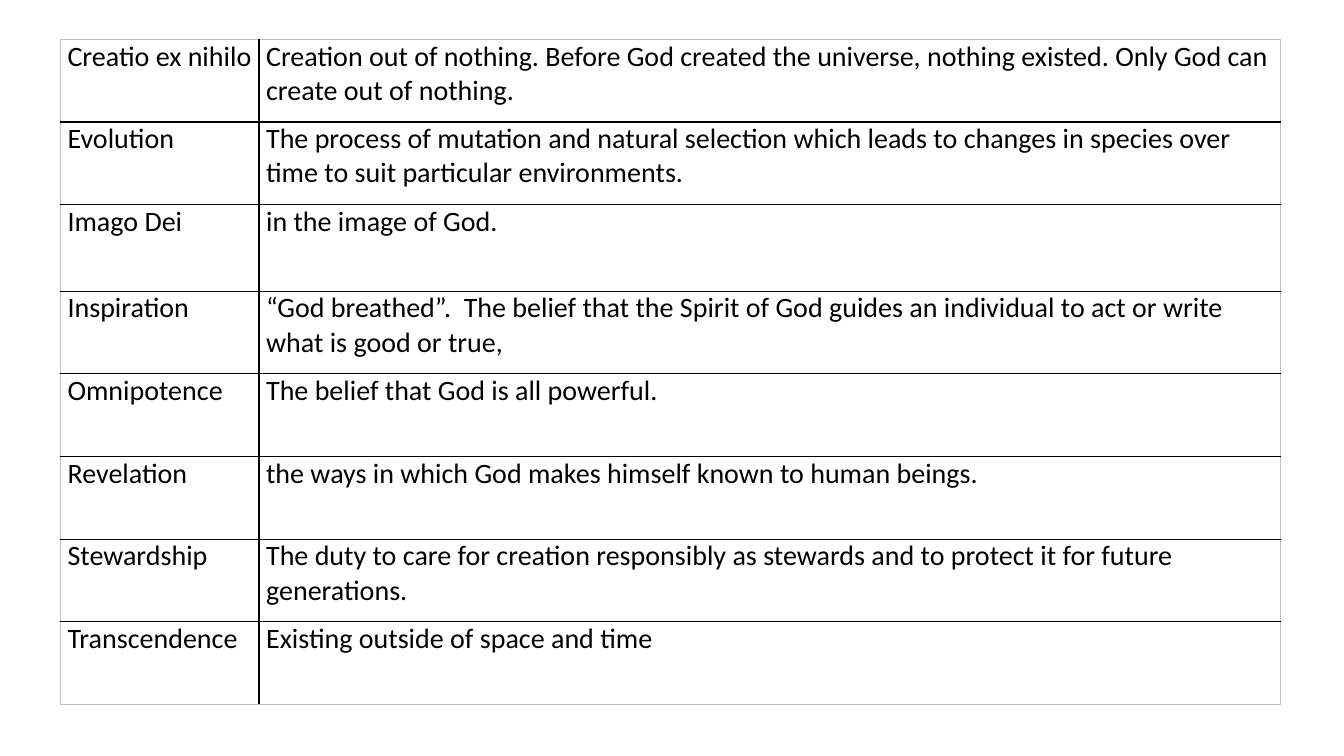
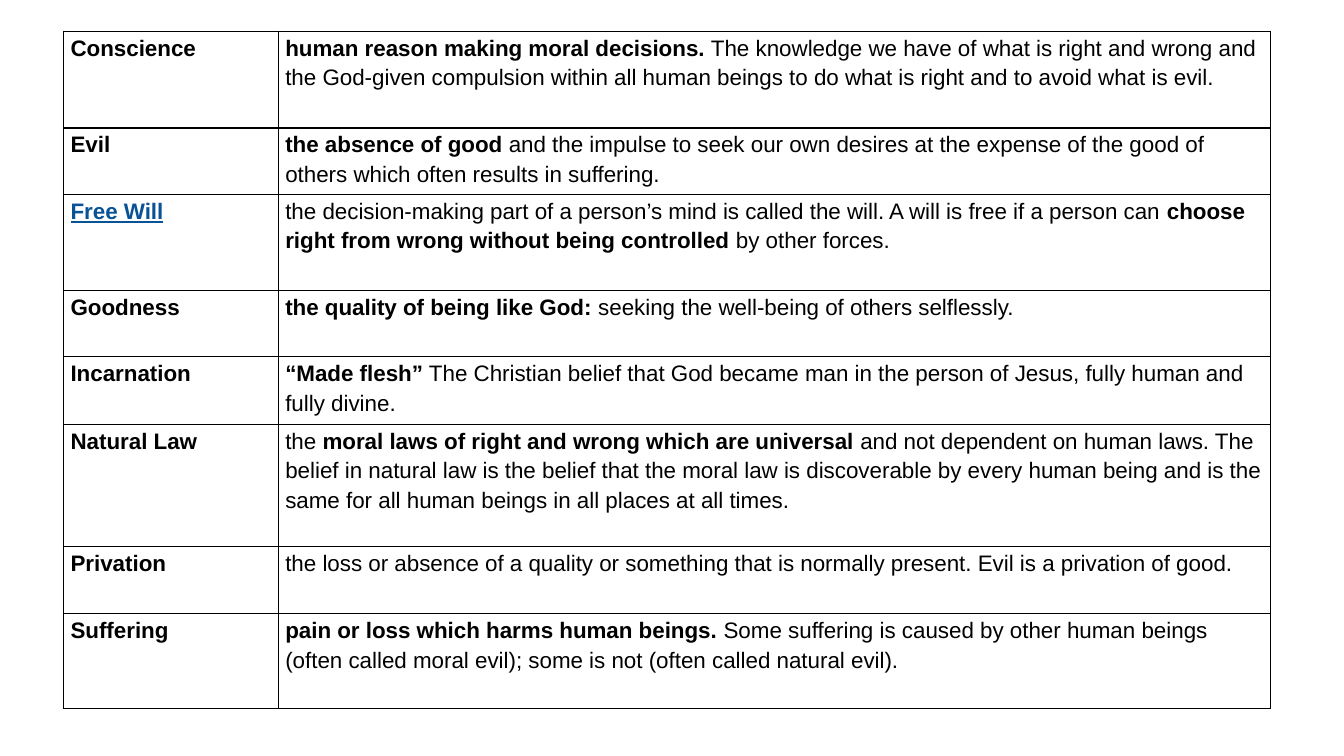
"""Build two glossary slides of religious terms."""
from lxml import etree
from pptx import Presentation
from pptx import util as u
from pptx.dml.color import RGBColor
from pptx.enum import text
from pptx.oxml import ns

PX = 9144
BLACK = RGBColor(0x00, 0x00, 0x00)
WHITE = RGBColor(0xFF, 0xFF, 0xFF)
GREY = RGBColor(0xBF, 0xBF, 0xBF)
LINK_BLUE = RGBColor(0x08, 0x52, 0x96)
BOLD_MARK = "**"
BLANK_LAYOUT = 6
CELL_FORMAT = {
    "margin_left": u.Emu(7 * PX),
    "margin_right": u.Emu(7 * PX),
    "margin_top": 0,
    "margin_bottom": 0,
    "vertical_anchor": text.MSO_ANCHOR.TOP,
}

CREATION = {
    "box": (60, 39),
    "columns": (197, 1013),
    "rows": (82, 82, 86, 82, 82, 82, 82, 82),
    "font": {"name": "Calibri", "size": u.Pt(20)},
    "paragraph": {},
    "edge": GREY,
    "links": (),
    "entries": (
        ("Creatio ex nihilo",
         "Creation out of nothing. Before God created the universe, nothing existed. "
         "Only God can create out of nothing."),
        ("Evolution",
         "The process of mutation and natural selection which leads to changes in species "
         "over time to suit particular environments."),
        ("Imago Dei", "in the image of God."),
        ("Inspiration",
         "“God breathed”.  The belief that the Spirit of God guides an individual to act "
         "or write what is good or true,"),
        ("Omnipotence", "The belief that God is all powerful."),
        ("Revelation", "the ways in which God makes himself known to human beings."),
        ("Stewardship",
         "The duty to care for creation responsibly as stewards and to protect it for "
         "future generations."),
        ("Transcendence", "Existing outside of space and time"),
    ),
}

GOOD_AND_EVIL = {
    "box": (63, 31),
    "columns": (213, 984),
    "rows": (96, 66, 95, 66, 67, 121, 67, 94),
    "font": {"name": "Arial", "size": u.Pt(16)},
    "paragraph": {"line_spacing": 1.19, "space_after": u.Pt(6)},
    "edge": BLACK,
    "links": ("Free Will",),
    "entries": (
        ("**Conscience**",
         "**human reason making moral decisions.** The knowledge we have of what is right "
         "and wrong and the God-given compulsion within all human beings to do what is "
         "right and to avoid what is evil."),
        ("**Evil**",
         "**the absence of good** and the impulse to seek our own desires at the expense "
         "of the good of others which often results in suffering."),
        ("**Free Will**",
         "the decision-making part of a person’s mind is called the will. A will is free "
         "if a person can **choose right from wrong without being controlled** by other "
         "forces."),
        ("**Goodness**",
         "**the quality of being like God:** seeking the well-being of others selflessly."),
        ("**Incarnation**",
         "**“Made flesh”** The Christian belief that God became man in the person of "
         "Jesus, fully human and fully divine."),
        ("**Natural Law**",
         "the **moral laws of right and wrong which are universal** and not dependent on "
         "human laws. The belief in natural law is the belief that the moral law is "
         "discoverable by every human being and is the same for all human beings in all "
         "places at all times."),
        ("**Privation**",
         "the loss or absence of a quality or something that is normally present. Evil is "
         "a privation of good."),
        ("**Suffering**",
         "**pain or loss which harms human beings.** Some suffering is caused by other "
         "human beings (often called moral evil); some is not (often called natural evil)."),
    ),
}


def apply(target, values):
    """Set each attribute named in values on the target."""
    for name, value in values.items():
        setattr(target, name, value)


def draw_borders(cell, colours):
    """Give the cell one-point borders, in the order left, right, top, bottom."""
    properties = cell._tc.get_or_add_tcPr()
    for side, colour in zip("LRTB", colours):
        line = etree.SubElement(properties, ns.qn(f"a:ln{side}"), w=str(u.Pt(1)))
        fill = etree.SubElement(line, ns.qn("a:solidFill"))
        etree.SubElement(fill, ns.qn("a:srgbClr"), val=str(colour))


def write_cell(cell, words, glossary):
    """Write words into the cell, with marked parts in bold."""
    apply(cell, CELL_FORMAT)
    paragraph = cell.text_frame.paragraphs[0]
    apply(paragraph, glossary["paragraph"])
    for index, part in enumerate(words.split(BOLD_MARK)):
        if not part:
            continue
        run = paragraph.add_run()
        run.text = part
        is_link = part in glossary["links"]
        apply(run.font, {**glossary["font"], "bold": index % 2 == 1, "underline": is_link})
        run.font.color.rgb = LINK_BLUE if is_link else BLACK


def add_glossary(slide, glossary):
    """Place a table of terms and their meanings on the slide."""
    left, top = glossary["box"]
    columns, rows, edge = (glossary[key] for key in ("columns", "rows", "edge"))
    box = (u.Emu(n * PX) for n in (left, top, sum(columns), sum(rows)))
    table = slide.shapes.add_table(len(rows), len(columns), *box).table
    apply(table, {"first_row": False, "horz_banding": False})
    for column, width in zip(table.columns, columns):
        column.width = u.Emu(width * PX)
    for row, height in zip(table.rows, rows):
        row.height = u.Emu(height * PX)
    for r, entry in enumerate(glossary["entries"]):
        for c, words in enumerate(entry):
            cell = table.cell(r, c)
            outer = (c == 0, c == len(columns) - 1, r == 0, r == len(rows) - 1)
            draw_borders(cell, [edge if is_outer else BLACK for is_outer in outer])
            cell.fill.solid()
            cell.fill.fore_color.rgb = WHITE
            write_cell(cell, words, glossary)


def main():
    """Build and save the presentation."""
    deck = Presentation()
    apply(deck, {"slide_width": u.Emu(1333 * PX), "slide_height": u.Emu(750 * PX)})
    for glossary in (CREATION, GOOD_AND_EVIL):
        add_glossary(deck.slides.add_slide(deck.slide_layouts[BLANK_LAYOUT]), glossary)
    deck.save("out.pptx")


if __name__ == "__main__":
    main()
